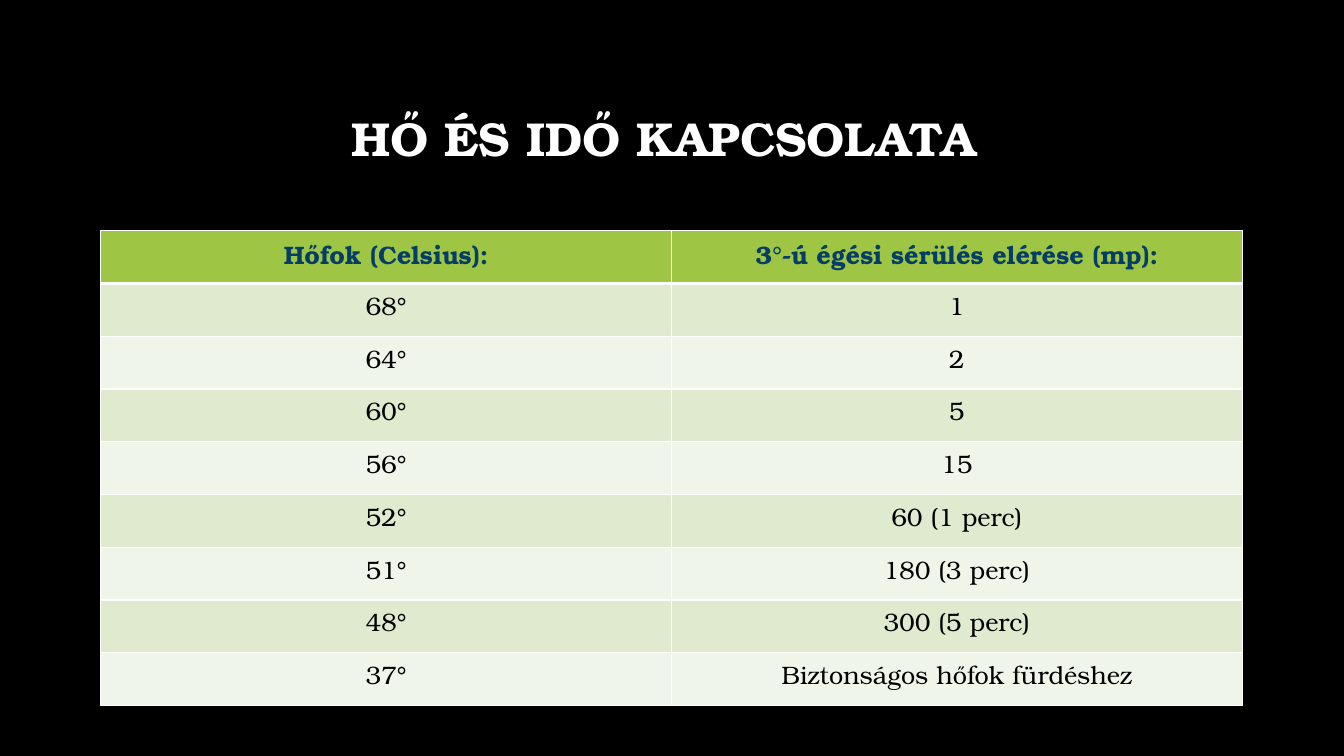
from dataclasses import dataclass

import pptx
import pptx.dml.color
import pptx.enum.text
import pptx.oxml
import pptx.util
from pptx.util import Inches


@dataclass(frozen=True)
class Theme:
    font: str = "TeX Gyre Bonum"
    background: str = "000000"
    title: str = "FFFFFF"
    header_fill: str = "9EC544"
    header_text: str = "043D66"
    body_text: str = "000000"
    band_fills: tuple = ("DFEACF", "F0F5E9")
    border: str = "FFFFFF"
    title_size: int = 34
    table_size: int = 18
    thin_line: int = 1
    thick_line: int = 3


THEME = Theme()
ROWS = [
    ("Hőfok (Celsius):", "3°-ú égési sérülés elérése (mp):"),
    ("68°", "1"),
    ("64°", "2"),
    ("60°", "5"),
    ("56°", "15"),
    ("52°", "60 (1 perc)"),
    ("51°", "180 (3 perc)"),
    ("48°", "300 (5 perc)"),
    ("37°", "Biztonságos hőfok fürdéshez"),
]


def rgb(value):
    return pptx.dml.color.RGBColor.from_string(value)


def set_text(text_frame, text, size, color, bold):
    text_frame.text = text
    paragraph = text_frame.paragraphs[0]
    paragraph.alignment = pptx.enum.text.PP_ALIGN.CENTER
    font = paragraph.runs[0].font
    font.name = THEME.font
    font.size = pptx.util.Pt(size)
    font.bold = bold
    font.color.rgb = rgb(color)
    return paragraph


def set_borders(cell, top, bottom):
    properties = cell._tc.get_or_add_tcPr()
    widths = {"lnL": THEME.thin_line, "lnR": THEME.thin_line, "lnT": top, "lnB": bottom}
    for position, (tag, width) in enumerate(widths.items()):
        line = pptx.oxml.parse_xml(
            f'<a:{tag} xmlns:a="http://schemas.openxmlformats.org/drawingml/2006/main" '
            f'w="{pptx.util.Pt(width)}"><a:solidFill><a:srgbClr val="{THEME.border}"/>'
            f"</a:solidFill></a:{tag}>"
        )
        properties.insert(position, line)


def add_title(slide, text):
    shape = slide.shapes.add_textbox(Inches(1), Inches(0.67), Inches(11.32), Inches(1.45))
    text_frame = shape.text_frame
    text_frame.word_wrap = True
    text_frame.vertical_anchor = pptx.enum.text.MSO_ANCHOR.MIDDLE
    paragraph = set_text(text_frame, text, THEME.title_size, THEME.title, True)
    paragraph.line_spacing = 0.9


def add_burn_table(slide, rows):
    frame = slide.shapes.add_table(
        len(rows), len(rows[0]), Inches(1), Inches(2.29), Inches(11.32), Inches(4.71)
    )
    for row_index, row in enumerate(rows):
        header = row_index == 0
        fill = THEME.header_fill if header else THEME.band_fills[(row_index - 1) % 2]
        color = THEME.header_text if header else THEME.body_text
        top = THEME.thick_line if row_index == 1 else THEME.thin_line
        bottom = THEME.thick_line if header else THEME.thin_line
        for column_index, text in enumerate(row):
            cell = frame.table.cell(row_index, column_index)
            cell.fill.solid()
            cell.fill.fore_color.rgb = rgb(fill)
            set_text(cell.text_frame, text, THEME.table_size, color, header)
            set_borders(cell, top, bottom)


def main():
    presentation = pptx.Presentation()
    presentation.slide_width = Inches(13.33)
    presentation.slide_height = Inches(7.5)
    slide = presentation.slides.add_slide(presentation.slide_layouts[6])
    slide.background.fill.solid()
    slide.background.fill.fore_color.rgb = rgb(THEME.background)
    add_title(slide, "HŐ ÉS IDŐ KAPCSOLATA ")
    add_burn_table(slide, ROWS)
    presentation.save("out.pptx")


if __name__ == "__main__":
    main()
